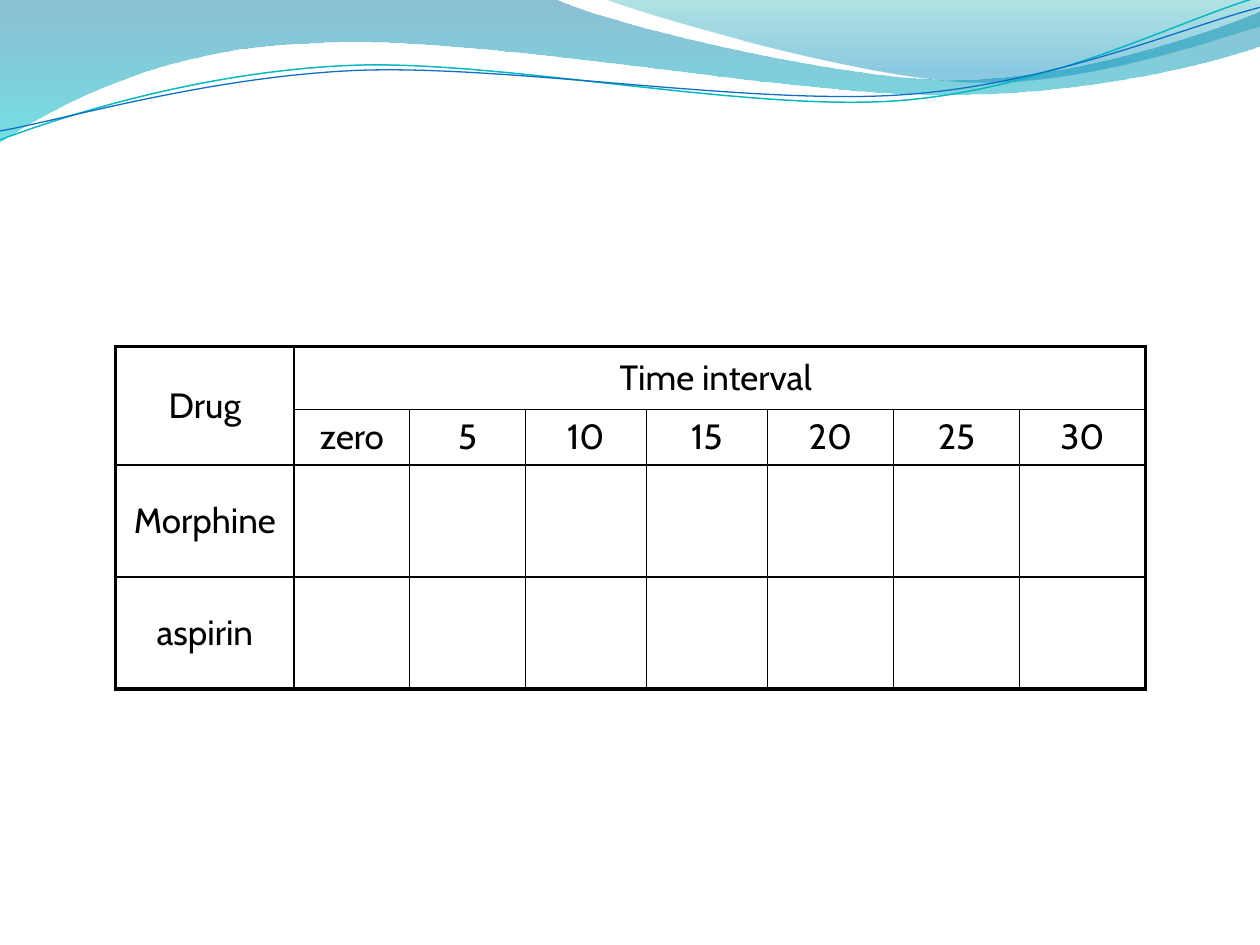
import pptx
import pptx.util
import pptx.oxml
import pptx.oxml.ns
import pptx.enum.text
import pptx.dml.color
from lxml import etree

Cm, Pt = pptx.util.Cm, pptx.util.Pt
qn = pptx.oxml.ns.qn
COLORS = {
    "text": "000000", "border": "000000", "teal": "0AB8BF", "blue": "0F6FC6",
    "deep": "0074A1", "aqua": "00C6CF", "sea": "00A1A9", "sky": "008BBF",
}
FONT = "Cabin"

BANDS = [
    ([(0, 0), (11.18, -0.03),
      ((12.09, 0.43), (16.87, 1.6), (19.25, 1.6)),
      ((21.67, 1.6), (24.33, 0.66), (25.4, 0.23)),
      (25.43, 0.91),
      ((24.97, 1.12), (22.1, 1.93), (18.95, 1.91)),
      ((15.8, 1.91), (9.7, 0.71), (6.53, 0.86)),
      ((3.28, 0.91), (1.17, 2.11), (-0.03, 2.87)),
      (0, 0)],
     [(0, "deep", 45), (100, "aqua", 55)]),
    ([(12.17, -0.03),
      ((12.93, 0.28), (17.32, 1.57), (19.53, 1.65)),
      ((21.74, 1.75), (24.41, 0.81), (25.4, 0.53)),
      (25.4, 0), (12.17, -0.03)],
     [(0, "sea", 30), (80, "sky", 45)]),
]
STRANDS = [
    ([(0, 2.82),
      ((1.22, 2.36), (4.01, 1.45), (7.04, 1.32)),
      ((10.03, 1.19), (15.06, 2.26), (18.11, 2.03)),
      ((21.16, 1.8), (23.83, 0.38), (25.35, -0.05))], "teal", 0.85),
    ([(0, 2.64),
      ((1.19, 2.44), (4.17, 1.55), (7.19, 1.42)),
      ((10.24, 1.3), (15.16, 2.13), (18.21, 1.91)),
      ((21.23, 1.7), (23.9, 0.53), (25.4, 0.15))], "blue", 0.75),
]

COLUMNS = [3.6, 2.33, 2.33, 2.44, 2.44, 2.54, 2.54, 2.54]
ROWS = [1.27, 1, 2.26, 2.26]
LABELS = [
    ["Drug", "Time interval "],
    ["", "zero", "5", "10", "15", "20", "25", "30"],
    ["Morphine"],
    ["aspirin"],
]


def rgb(name):
    """Return the named colour."""
    return pptx.dml.color.RGBColor.from_string(COLORS[name])


def add_outline(slide, outline, left, top, close):
    """Draw lines and cubic curves given in centimetres from left and top."""
    segments = [s if isinstance(s[0], tuple) else (s,) for s in outline]
    points = [(round(x * 100), round(y * 100)) for s in segments for x, y in s]
    builder = slide.shapes.build_freeform(*points[0], scale=Cm(0.01))
    builder.add_line_segments(points[1:], close=close)
    sp = builder.convert_to_shape(left, top)
    sp.shadow.inherit = False
    lines = iter(list(sp.element.iter(qn("a:lnTo"))))
    for segment in segments[1:]:
        first, *others = [next(lines) for _ in segment]
        if others:
            first.tag = qn("a:cubicBezTo")
        for line in others:
            first.append(line[0])
            line.getparent().remove(line)
    return sp


def fill_gradient(sp, stops):
    """Fill a shape from top to bottom with translucent colours."""
    sp.fill.gradient()
    grad = sp.element.spPr.find(qn("a:gradFill"))
    for child in list(grad):
        grad.remove(child)
    stop_list = etree.SubElement(grad, qn("a:gsLst"))
    for position, color, opacity in stops:
        gs = etree.SubElement(stop_list, qn("a:gs"), pos=str(position * 1000))
        clr = etree.SubElement(gs, qn("a:srgbClr"), val=COLORS[color])
        etree.SubElement(clr, qn("a:alpha"), val=str(opacity * 1000))
    etree.SubElement(grad, qn("a:lin"), ang="5400000", scaled="0")


def add_waves(slide, left, top):
    """Draw the wave header with its bands and thin strands."""
    for outline, stops in BANDS:
        sp = add_outline(slide, outline, left, top, True)
        fill_gradient(sp, stops)
        sp.line.fill.background()
    for outline, color, width in STRANDS:
        sp = add_outline(slide, outline, left, top, False)
        sp.fill.background()
        sp.line.color.rgb = rgb(color)
        sp.line.width = Pt(width)


def set_borders(cell, widths):
    """Give a cell solid borders, with widths keyed by side."""
    tc_pr = cell._tc.get_or_add_tcPr()
    for side, width in widths.items():
        ln = etree.SubElement(tc_pr, qn("a:ln" + side), w=str(Pt(width)))
        fill = etree.SubElement(ln, qn("a:solidFill"))
        etree.SubElement(fill, qn("a:srgbClr"), val=COLORS["border"])


def add_drug_table(slide, left, top):
    """Place the table of drugs by time interval."""
    table = slide.shapes.add_table(len(ROWS), len(COLUMNS), left, top,
                                   Cm(sum(COLUMNS)), Cm(sum(ROWS))).table
    table.first_row = table.horz_banding = False
    for column, width in zip(table.columns, COLUMNS):
        column.width = Cm(width)
    for row, height in zip(table.rows, ROWS):
        row.height = Cm(height)
    last_row, last_col = len(ROWS) - 1, len(COLUMNS) - 1
    table.cell(0, 0).merge(table.cell(1, 0))
    table.cell(0, 1).merge(table.cell(0, last_col))
    for r in range(len(ROWS)):
        for c in range(len(COLUMNS)):
            cell = table.cell(r, c)
            right = c + (cell.span_width if cell.is_merge_origin else 1) - 1
            edges = {"L": c == 0, "R": right == last_col, "T": r == 0, "B": r == last_row}
            set_borders(cell, {side: 2.25 if outer else 1 for side, outer in edges.items()})
            cell.fill.background()
            cell.vertical_anchor = pptx.enum.text.MSO_ANCHOR.MIDDLE
            p = cell.text_frame.paragraphs[0]
            if c < len(LABELS[r]):
                p.text = LABELS[r][c]
            p.alignment = pptx.enum.text.PP_ALIGN.CENTER
            p.font.name = FONT
            p.font.size = Pt(20)
            p.font.color.rgb = rgb("text")


def main():
    """Build the slide and save it."""
    prs = pptx.Presentation()
    prs.slide_width, prs.slide_height = Cm(25.4), Cm(19.05)
    slide = prs.slides.add_slide(prs.slide_layouts[6])
    add_waves(slide, Cm(0), Cm(0))
    add_drug_table(slide, Cm(2.33), Cm(6.99))
    prs.save("out.pptx")


if __name__ == "__main__":
    main()
